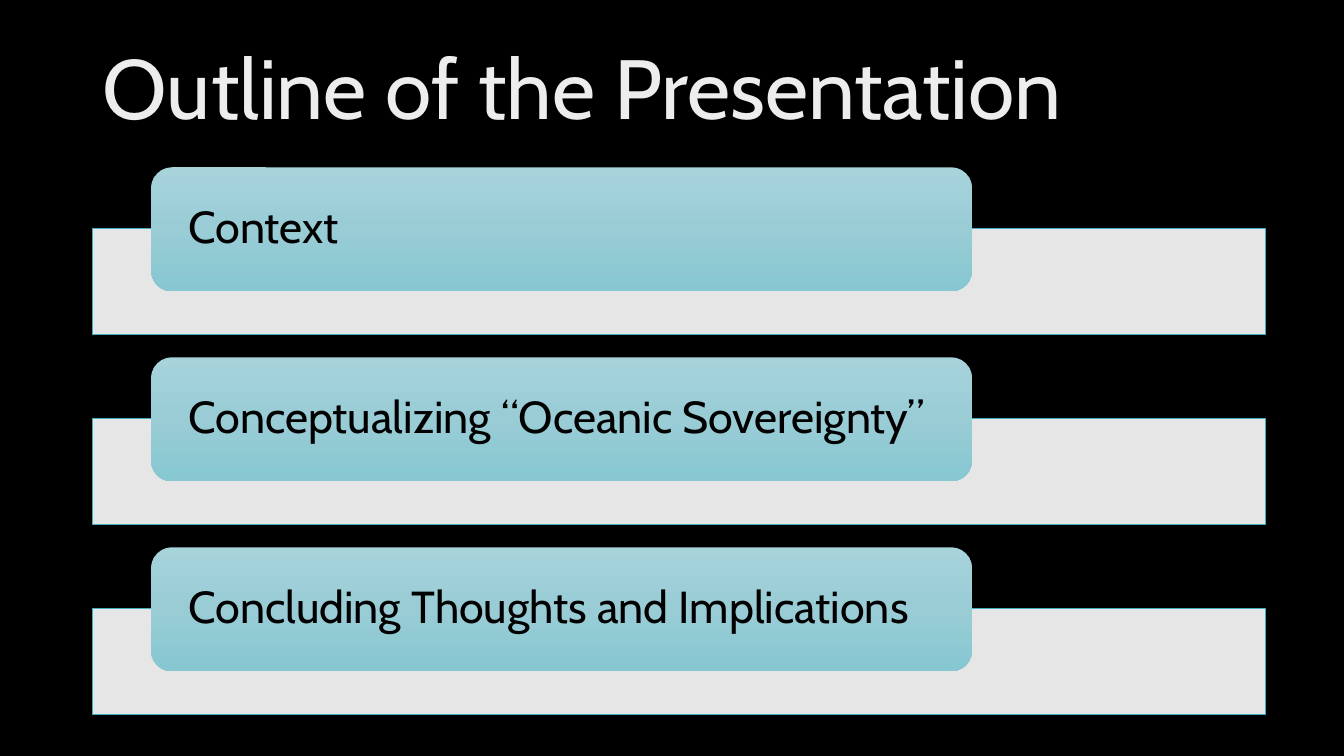
import pptx
import pptx.dml.color
import pptx.enum.shapes
import pptx.enum.text
import pptx.oxml
import pptx.oxml.ns
import pptx.util
from pptx.util import Inches

# Content
TITLE = "Outline of the Presentation"
TOPICS = [
    "Context",
    "Conceptualizing “Oceanic Sovereignty”",
    "Concluding Thoughts and Implications",
]

# Style
FONT = "Cabin"
TITLE_STOPS = [(0, "BFBFBF"), (28, "EDEDED"), (100, "FFFFFF")]
PILL_STOPS = [(0, "A7D3DB"), (50, "99CCD5"), (100, "86C7D2")]

# Layout in inches
LEFT, BAR_W, BAR_H = 0.92, 11.63, 1.05
PILL_LEFT, PILL_W, PILL_H = 1.5, 8.14, 1.23
FIRST_TOP, STEP, BAR_DROP = 1.66, 1.885, 0.61


def rgb(color):
    return pptx.dml.color.RGBColor.from_string(color)


def gradient(fill, parent, stops, angle):
    """Fill with the given (percent, colour) stops at a clockwise angle."""
    fill.gradient()
    grad = parent.find(pptx.oxml.ns.qn("a:gradFill"))
    gs_list = grad.find(pptx.oxml.ns.qn("a:gsLst"))
    for gs in list(gs_list):
        gs_list.remove(gs)
    for percent, color in stops:
        gs_list.append(pptx.oxml.parse_xml(
            f'<a:gs {pptx.oxml.ns.nsdecls("a")} pos="{percent * 1000}">'
            f'<a:srgbClr val="{color}"/></a:gs>'))
    grad.find(pptx.oxml.ns.qn("a:lin")).set("ang", str(angle * 60000))


def write(sp, text, size, color=None, inset_x=0.1, inset_y=0.05):
    tf = sp.text_frame
    tf.word_wrap = True
    tf.auto_size = pptx.enum.text.MSO_AUTO_SIZE.NONE
    tf.vertical_anchor = pptx.enum.text.MSO_ANCHOR.MIDDLE
    tf.margin_left = tf.margin_right = Inches(inset_x)
    tf.margin_top = tf.margin_bottom = Inches(inset_y)
    p = tf.paragraphs[0]
    p.alignment = pptx.enum.text.PP_ALIGN.LEFT
    p.line_spacing = 0.9
    r = p.add_run()
    r.text = text
    r.font.size = pptx.util.Pt(size)
    r.font.name = FONT
    if color:
        r.font.color.rgb = rgb(color)
    return r


def add_box(s, kind, left, top, width, height):
    sp = s.shapes.add_shape(kind, Inches(left), Inches(top),
                            Inches(width), Inches(height))
    sp.shadow.inherit = False
    return sp


def add_topic(s, text, top):
    shape = pptx.enum.shapes.MSO_SHAPE

    # Translucent bar behind
    bar = add_box(s, shape.RECTANGLE, LEFT, top + BAR_DROP, BAR_W, BAR_H)
    bar.fill.solid()
    bar.fill.fore_color.rgb = rgb("FFFFFF")
    color = bar._element.spPr.find(".//" + pptx.oxml.ns.qn("a:srgbClr"))
    color.append(pptx.oxml.parse_xml(
        f'<a:alpha {pptx.oxml.ns.nsdecls("a")} val="90000"/>'))
    bar.line.color.rgb = rgb("41AEBD")
    bar.line.width = pptx.util.Pt(0.5)

    # Rounded label in front
    pill = add_box(s, shape.ROUNDED_RECTANGLE, PILL_LEFT, top, PILL_W, PILL_H)
    gradient(pill.fill, pill._element.spPr, PILL_STOPS, 90)
    pill.line.fill.background()
    write(pill, text, 32, color="000000", inset_x=0.31, inset_y=0)


def main():
    prs = pptx.Presentation()
    prs.slide_width, prs.slide_height = Inches(13.33), Inches(7.5)
    s = prs.slides.add_slide(prs.slide_layouts[5])
    s.background.fill.solid()
    s.background.fill.fore_color.rgb = rgb("000000")

    # Title
    title = s.shapes.title
    title.left, title.top = Inches(LEFT), Inches(0.19)
    title.width, title.height = Inches(11.5), Inches(1.45)
    r = write(title, TITLE, 60)
    gradient(r.font.fill, r._r.get_or_add_rPr(), TITLE_STOPS, 80)

    # Topics
    for i, topic in enumerate(TOPICS):
        add_topic(s, topic, FIRST_TOP + i * STEP)

    prs.save("out.pptx")


if __name__ == "__main__":
    main()
